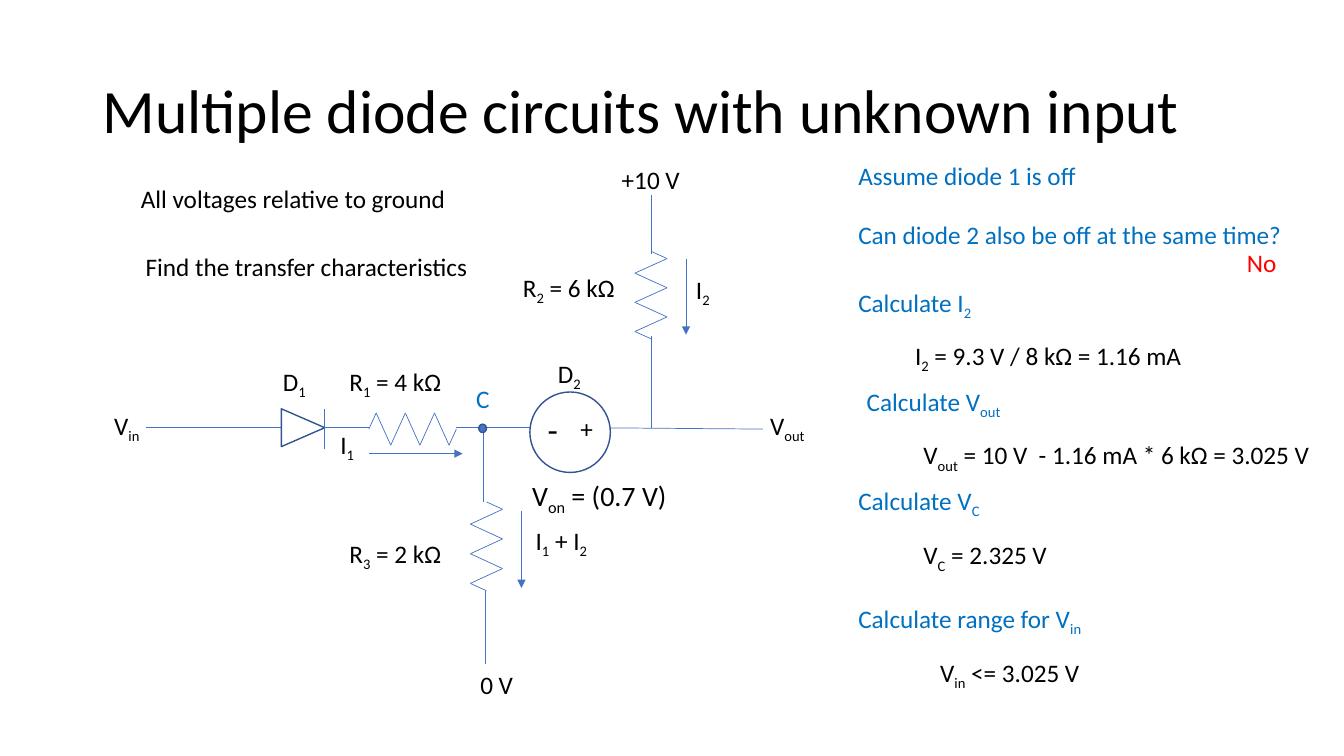
from itertools import pairwise

from lxml import etree
from pptx import Presentation
from pptx.dml.color import RGBColor
from pptx.enum.shapes import MSO_CONNECTOR, MSO_SHAPE
from pptx.enum.text import MSO_ANCHOR, MSO_AUTO_SIZE, PP_ALIGN
from pptx.oxml.ns import qn
from pptx.util import Pt

STRAIGHT = MSO_CONNECTOR.STRAIGHT
TRIANGLE, OVAL = MSO_SHAPE.ISOSCELES_TRIANGLE, MSO_SHAPE.OVAL
MIDDLE, LEFT = MSO_ANCHOR.MIDDLE, PP_ALIGN.LEFT
GROW, NO_FIT = MSO_AUTO_SIZE.SHAPE_TO_FIT_TEXT, MSO_AUTO_SIZE.NONE

FONT = "Calibri"
BLACK, WHITE, BLUE, RED = "000000", "FFFFFF", "0070C0", "FF0000"
WIRE, OUTLINE = "4472C4", "325491"


def rgb(color):
    return RGBColor.from_string(color)


def write(p, text, size, color):
    """Fill a paragraph; parts between bars become subscripts."""
    for i, part in enumerate(text.split("|")):
        if not part:
            continue
        r = p.add_run()
        r.text = part
        r.font.name, r.font.size = FONT, Pt(size)
        r.font.color.rgb = rgb(color)
        if i % 2:
            r._r.get_or_add_rPr().set("baseline", "-25000")


def label(s, x, y, w, text, color=BLACK, size=18, h=29):
    sp = s.shapes.add_textbox(Pt(x), Pt(y), Pt(w), Pt(h))
    tf = sp.text_frame
    tf.word_wrap = True
    tf.auto_size = GROW
    write(tf.paragraphs[0], text, size, color)
    return sp


def line(s, x1, y1, x2, y2, arrow=False):
    c = s.shapes.add_connector(STRAIGHT, Pt(x1), Pt(y1), Pt(x2), Pt(y2))
    c.line.color.rgb = rgb(WIRE)
    c.line.width = Pt(0.5)
    props = c._element.spPr
    if arrow:
        etree.SubElement(props.find(qn("a:ln")), qn("a:tailEnd"), type="triangle")
    etree.SubElement(props, qn("a:effectLst"))


def outline(s, kind, x, y, w, h, fill=None):
    sp = s.shapes.add_shape(kind, Pt(x), Pt(y), Pt(w), Pt(h))
    sp.shadow.inherit = False
    if fill:
        sp.fill.solid()
        sp.fill.fore_color.rgb = rgb(fill)
    else:
        sp.fill.background()
    sp.line.color.rgb = rgb(OUTLINE)
    sp.line.width = Pt(1)
    return sp


def resistor(s, x, y, w, h):
    """Zigzag along the longer side of its box, with half-length end strokes."""
    across = w > h
    steps = [0] + [i + 0.5 for i in range(6)] + [6]
    sides = [0.5] + [0, 1] * 3 + [0.5]
    points = []
    for step, side in zip(steps, sides):
        along = step / 6
        dx, dy = (along, side) if across else (1 - side, along)
        points.append((x + w * dx, y + h * dy))
    for start, end in pairwise(points):
        line(s, *start, *end)


def diode(s, x, y, w, h):
    """Right-pointing diode; the triangle is laid out upright and then turned."""
    sp = outline(s, TRIANGLE, x + (w - h) / 2, y + (h - w) / 2, h, w)
    sp.rotation = 90
    line(s, x + w, y + h + 2, x + w, y)


def on_diode_source(s, x, y, d):
    """Conducting diode shown as a voltage source of diameter d."""
    outline(s, OVAL, x, y, d, d, WHITE)
    label(s, x + 5.5, y + 8.5, 26, "-", size=24, h=36)
    label(s, x + 29, y + 11.5, 26, "+")
    p = label(s, x - 5.5, y + 58.5, 117, "V|on| = (0.7 V)", size=20,
              h=44).text_frame.paragraphs[0]
    p.line_spacing, p.space_before = 0.9, Pt(10)


def title(s, x, y, w, h, text):
    sp = s.shapes.title
    sp.left, sp.top, sp.width, sp.height = Pt(x), Pt(y), Pt(w), Pt(h)
    tf = sp.text_frame
    tf.word_wrap, tf.auto_size = True, NO_FIT
    tf.vertical_anchor = MIDDLE
    p = tf.paragraphs[0]
    p.alignment, p.line_spacing = LEFT, 0.9
    write(p, text, 44, BLACK)


def circuit(s, x, y):
    rail, node, supply = y + 191.5, x + 271.5, x + 390
    wires = [
        (x + 126, rail, x + 29.5, rail),
        (x + 188.5, rail, x + 157, rail),
        (x + 312, rail, x + 251, rail),
        (x + 342.5, rail, x + 470, rail + 1),
        (node - 1, rail, node - 1, y + 244.5),
        (node, y + 308, node, y + 360.5),
        (supply, y + 126, supply, rail),
        (supply, y + 67.5, supply, y + 25),
    ]
    for wire in wires:
        line(s, *wire)
    arrows = [
        (x + 188.5, y + 210, x + 255.5, y + 210),
        (x + 415, y + 71, x + 415, y + 125),
        (x + 297.5, y + 251, x + 297.5, y + 306),
    ]
    for arrow in arrows:
        line(s, *arrow, arrow=True)

    diode(s, x + 126, y + 178, 31, 27)
    resistor(s, x + 188.5, rail - 10.5, 62.5, 23)
    resistor(s, supply - 11.5, y + 65.5, 23, 62.5)
    resistor(s, node - 10.5, y + 244.5, 23, 63.5)
    on_diode_source(s, x + 303.5, y + 166, 57.5)
    outline(s, OVAL, x + 267, y + 189, 5.5, 6, WIRE)

    labels = [
        (-0.5, 175.5, 51, "V|in|"),
        (120, 144, 45, "D|1|"),
        (167.5, 144, 94, "R|1| = 4 kΩ"),
        (161, 189, 32, "I|1|"),
        (316.5, 138.5, 45, "D|2|"),
        (362, 0, 70, "+10 V"),
        (291.5, 77, 94, "R|2| = 6 kΩ"),
        (415, 78.5, 32, "I|2|"),
        (468, 175.5, 51, "V|out|"),
        (167.5, 267, 94, "R|3| = 2 kΩ"),
        (300.5, 257.5, 66, "I|1| + I|2|"),
        (261, 360.5, 51, "0 V"),
    ]
    for dx, dy, w, text in labels:
        label(s, x + dx, y + dy, w, text)
    label(s, x + 258, y + 156.5, 45, "C", BLUE)


def solution(s, x, y):
    steps = [
        (0, 0, 237, "Assume diode 1 is off", BLUE),
        (0, 42, 329, "Can diode 2 also be off at the same time?", BLUE),
        (277.5, 62, 63, "No", RED),
        (0, 90.5, 329, "Calculate I|2|", BLUE),
        (40.5, 128.5, 237, "I|2| = 9.3 V / 8 kΩ = 1.16 mA", BLACK),
        (6, 161.5, 329, "Calculate V|out|", BLUE),
        (46.5, 199.5, 307, "V|out| = 10 V  - 1.16 mA * 6 kΩ = 3.025 V", BLACK),
        (0, 232, 329, "Calculate V|C|", BLUE),
        (46.5, 271, 179, "V|C| = 2.325 V", BLACK),
        (0, 316.5, 329, "Calculate range for V|in|", BLUE),
        (58.5, 355, 179, "V|in| <= 3.025 V", BLACK),
    ]
    for dx, dy, w, text, color in steps:
        label(s, x + dx, y + dy, w, text, color)


def main():
    prs = Presentation()
    prs.slide_width, prs.slide_height = Pt(960), Pt(540)
    s = prs.slides.add_slide(prs.slide_layouts[5])
    title(s, 66, 29, 828, 104, "Multiple diode circuits with unknown input")
    label(s, 93.5, 127.5, 237, "All voltages relative to ground")
    label(s, 97, 176, 269, "Find the transfer characteristics")
    circuit(s, 75, 114)
    solution(s, 606, 111)
    prs.save("out.pptx")


if __name__ == "__main__":
    main()
